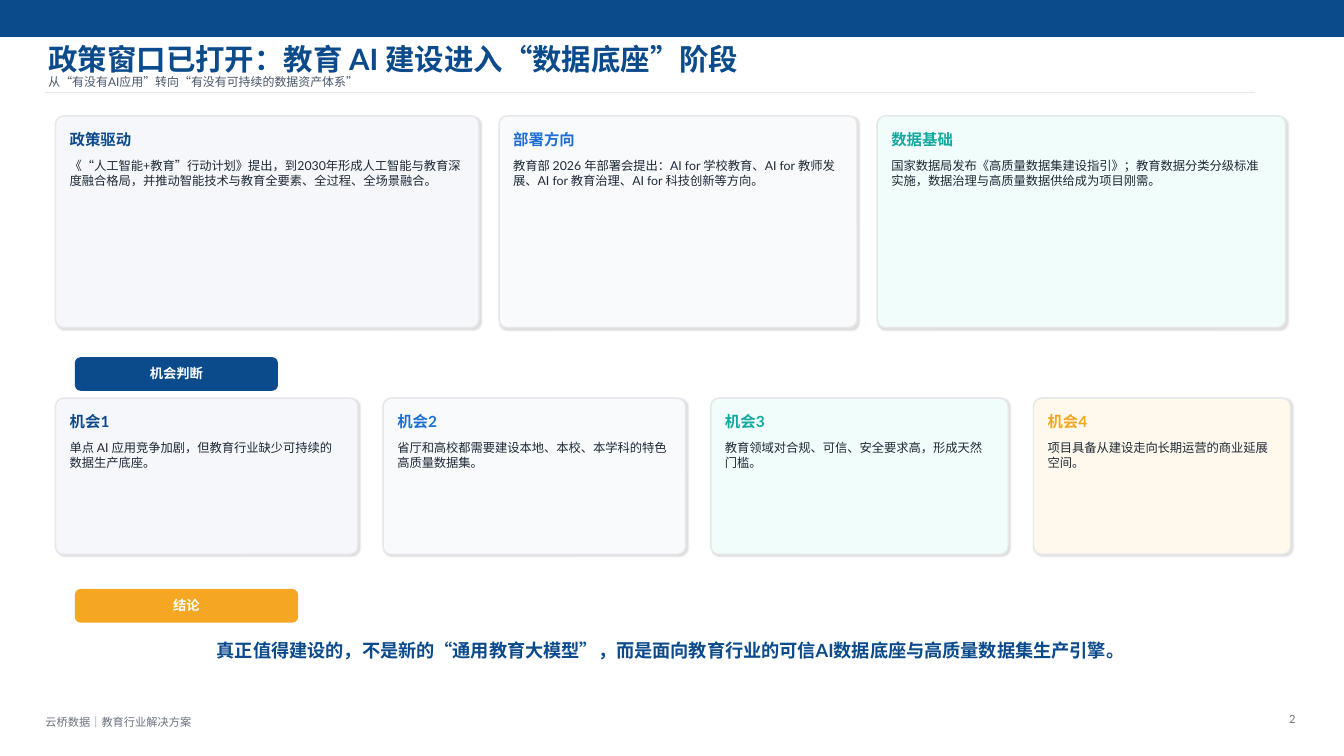
from lxml import etree
from pptx import Presentation
from pptx.dml.color import RGBColor
from pptx.enum.shapes import MSO_CONNECTOR, MSO_SHAPE
from pptx.enum.text import MSO_ANCHOR, MSO_AUTO_SIZE, PP_ALIGN
from pptx.oxml.ns import qn
from pptx.util import Inches, Pt

RECTANGLE, ROUNDED = MSO_SHAPE.RECTANGLE, MSO_SHAPE.ROUNDED_RECTANGLE
STRAIGHT = MSO_CONNECTOR.STRAIGHT
TOP, MIDDLE = MSO_ANCHOR.TOP, MSO_ANCHOR.MIDDLE
LEFT, CENTER, RIGHT = PP_ALIGN.LEFT, PP_ALIGN.CENTER, PP_ALIGN.RIGHT
NO_AUTOFIT = MSO_AUTO_SIZE.NONE

NAVY = RGBColor(0x0B, 0x4A, 0x8B)
BLUE = RGBColor(0x1D, 0x6F, 0xD6)
TEAL = RGBColor(0x11, 0xA8, 0xA0)
ORANGE = RGBColor(0xF5, 0xA6, 0x23)
WHITE = RGBColor(0xFF, 0xFF, 0xFF)
INK = RGBColor(0x1F, 0x29, 0x37)
SLATE = RGBColor(0x47, 0x55, 0x69)
GRAY = RGBColor(0x6B, 0x72, 0x80)
BORDER = RGBColor(0xE5, 0xE7, 0xEB)
PALE_GRAY = RGBColor(0xF5, 0xF7, 0xFA)
PALE_BLUE = RGBColor(0xF8, 0xFA, 0xFC)
PALE_TEAL = RGBColor(0xF0, 0xFD, 0xFA)
PALE_ORANGE = RGBColor(0xFF, 0xF8, 0xED)

FONT = "Lato"
CARD_LEFT = 0.55
CARD_PADDING = 0.14
CARD_RADIUS = 0.08
PILL_LEFT = 0.75
PILL_HEIGHT = 0.32
PILL_RADIUS = 0.05

# Each card: width, heading, text, accent colour, fill colour
POLICY_CARDS = [
    (4.2, "政策驱动",
     "《“人工智能+教育”行动计划》提出，到2030年形成人工智能与教育深度融合格局，"
     "并推动智能技术与教育全要素、全过程、全场景融合。", NAVY, PALE_GRAY),
    (3.55, "部署方向",
     "教育部 2026 年部署会提出：AI for 学校教育、AI for 教师发展、"
     "AI for 教育治理、AI for 科技创新等方向。", BLUE, PALE_BLUE),
    (4.05, "数据基础",
     "国家数据局发布《高质量数据集建设指引》；教育数据分类分级标准实施，"
     "数据治理与高质量数据供给成为项目刚需。", TEAL, PALE_TEAL),
]
OPPORTUNITY_CARDS = [
    (3, "机会1", "单点 AI 应用竞争加剧，但教育行业缺少可持续的数据生产底座。",
     NAVY, PALE_GRAY),
    (3, "机会2", "省厅和高校都需要建设本地、本校、本学科的特色高质量数据集。",
     BLUE, PALE_BLUE),
    (2.95, "机会3", "教育领域对合规、可信、安全要求高，形成天然门槛。",
     TEAL, PALE_TEAL),
    (2.55, "机会4", "项目具备从建设走向长期运营的商业延展空间。",
     ORANGE, PALE_ORANGE),
]


def set_attributes(target, values):
    for name, value in values.items():
        setattr(target, name, value)


def write_text(shape, text, size, color, bold=False, align=LEFT, anchor=MIDDLE):
    frame = shape.text_frame
    set_attributes(frame, {
        "margin_left": 0, "margin_top": 0, "margin_right": 0, "margin_bottom": 0,
        "word_wrap": True, "auto_size": NO_AUTOFIT, "vertical_anchor": anchor,
    })
    paragraph = frame.paragraphs[0]
    paragraph.alignment = align
    run = paragraph.add_run()
    run.text = text
    set_attributes(run.font, {"name": FONT, "size": Pt(size), "bold": bold})
    run.font.color.rgb = color


def add_text(slide, box, text, size, color, **options):
    shape = slide.shapes.add_textbox(*map(Inches, box))
    write_text(shape, text, size, color, **options)


def add_title(slide, box, text):
    title = slide.shapes.title
    set_attributes(title, dict(zip(("left", "top", "width", "height"),
                                   map(Inches, box))))
    write_text(title, text, 21, NAVY, bold=True)


def add_panel(slide, kind, box, fill, line, radius=0):
    panel = slide.shapes.add_shape(kind, *map(Inches, box))
    panel.shadow.inherit = False
    panel.fill.solid()
    panel.fill.fore_color.rgb = fill
    panel.line.color.rgb = line
    panel.line.width = Pt(1)
    if radius:
        panel.adjustments[0] = radius / box[3]
    return panel


def add_soft_shadow(shape):
    effects = shape._element.spPr.find(qn("a:effectLst"))
    shadow = etree.SubElement(effects, qn("a:outerShdw"), {
        "blurRad": str(Pt(1.2)), "dist": str(Pt(1.2)), "dir": "2700000",
        "algn": "tl", "rotWithShape": "0",
    })
    color = etree.SubElement(shadow, qn("a:srgbClr"), val="000000")
    etree.SubElement(color, qn("a:alpha"), val="12000")


def add_rule(slide, left, right, top):
    rule = slide.shapes.add_connector(
        STRAIGHT, Inches(left), Inches(top), Inches(right), Inches(top))
    rule.line.color.rgb = BORDER
    rule.line.width = Pt(1)
    etree.SubElement(rule._element.spPr, qn("a:effectLst"))


def add_card(slide, box, heading, text, accent, fill):
    left, top, width, height = box
    card = add_panel(slide, ROUNDED, box, fill, BORDER, CARD_RADIUS)
    add_soft_shadow(card)
    text_left, text_width = left + CARD_PADDING, width - 2 * CARD_PADDING
    add_text(slide, (text_left, top + 0.12, text_width, 0.22),
             heading, 11, accent, bold=True)
    add_text(slide, (text_left, top + 0.42, text_width, height - 0.52),
             text, 8.8, INK, anchor=TOP)


def add_card_row(slide, top, height, gap, cards):
    left = CARD_LEFT
    for width, *content in cards:
        add_card(slide, (left, top, width, height), *content)
        left += width + gap


def add_pill(slide, top, width, text, color):
    add_panel(slide, ROUNDED, (PILL_LEFT, top, width, PILL_HEIGHT),
              color, color, PILL_RADIUS)
    add_text(slide, (PILL_LEFT + 0.12, top + 0.06, width - 0.24, 0.18),
             text, 9.5, WHITE, bold=True, align=CENTER)


def main():
    presentation = Presentation()
    presentation.slide_width = Inches(13.33)
    presentation.slide_height = Inches(7.5)
    title_only = presentation.slide_layouts[5]
    slide = presentation.slides.add_slide(title_only)

    add_panel(slide, RECTANGLE, (0, 0, 13.33, 0.36), NAVY, NAVY)
    add_rule(slide, 0.45, 12.45, 0.92)
    add_title(slide, (0.48, 0.42, 9.8, 0.32),
              "政策窗口已打开：教育 AI 建设进入“数据底座”阶段")
    add_text(slide, (0.48, 0.72, 8.5, 0.18),
             "从“有没有AI应用”转向“有没有可持续的数据资产体系”", 8.5, SLATE)

    add_card_row(slide, 1.15, 2.1, 0.2, POLICY_CARDS)
    add_pill(slide, 3.55, 2, "机会判断", NAVY)
    add_card_row(slide, 3.95, 1.55, 0.25, OPPORTUNITY_CARDS)
    add_pill(slide, 5.85, 2.2, "结论", ORANGE)
    add_text(slide, (0.75, 6.24, 11.8, 0.42),
             "真正值得建设的，不是新的“通用教育大模型”，"
             "而是面向教育行业的可信AI数据底座与高质量数据集生产引擎。",
             13, NAVY, bold=True, align=CENTER)

    add_text(slide, (0.45, 7.08, 3.8, 0.16), "云桥数据｜教育行业解决方案", 8, GRAY)
    add_text(slide, (12.55, 7.05, 0.3, 0.16), "2", 8, GRAY, align=RIGHT)
    presentation.save("out.pptx")


if __name__ == "__main__":
    main()
